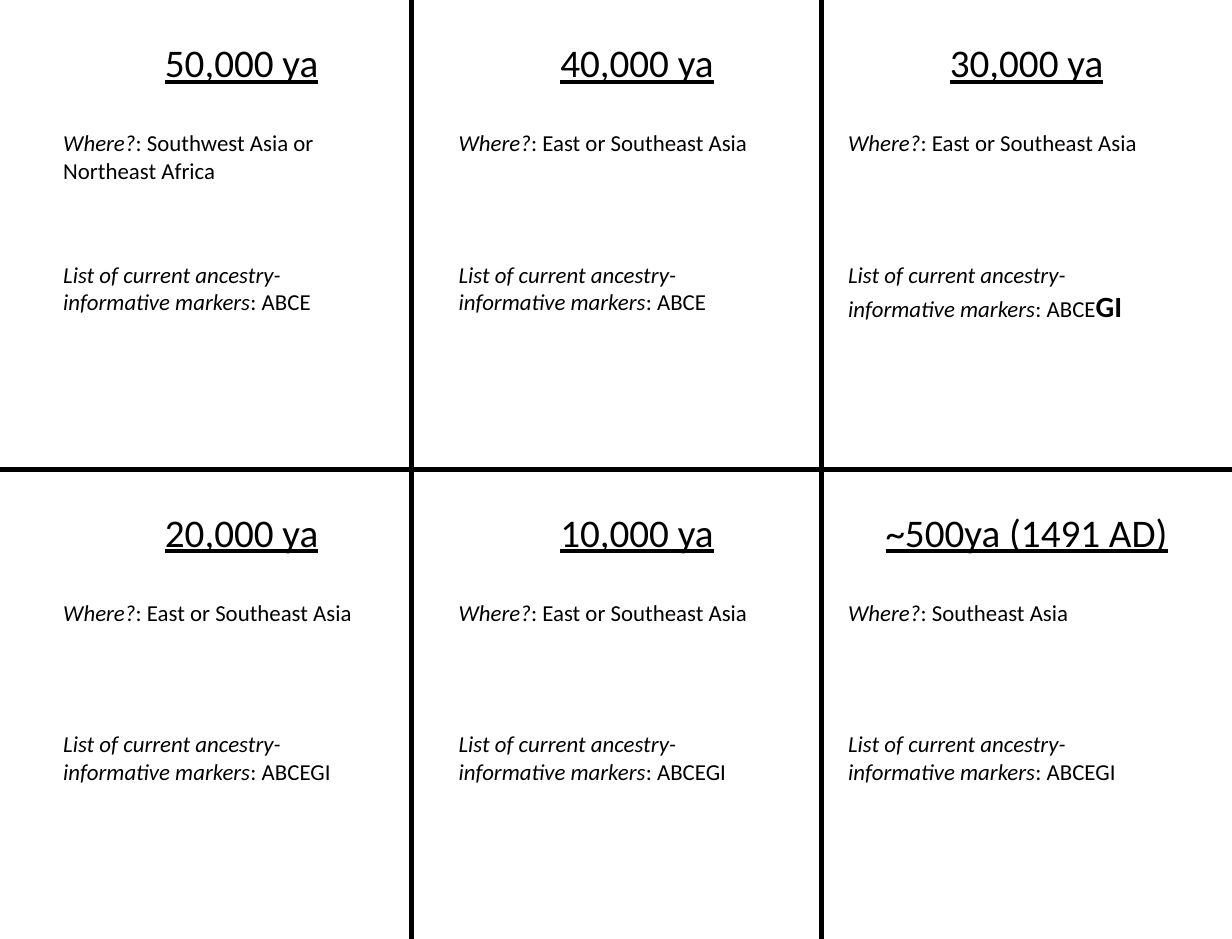
import pptx
import pptx.dml.color
import pptx.enum.shapes
import pptx.enum.text
import pptx.util
import lxml.etree

Inches = pptx.util.Inches
SLIDE_WIDTH, SLIDE_HEIGHT = 10.5, 8
ROW_HEIGHT = SLIDE_HEIGHT / 2
COLUMN_LEFTS = [0.44, 3.81, 7.13]
BLACK = "000000"
DRAWING_NS = "http://schemas.openxmlformats.org/drawingml/2006/main"

# Date, place, inherited markers, newly gained markers
PERIODS = [
    ("50,000 ya", "Southwest Asia or Northeast Africa", "ABCE", ""),
    ("40,000 ya", "East or Southeast Asia", "ABCE", ""),
    ("30,000 ya", "East or Southeast Asia", "ABCE", "GI"),
    ("20,000 ya", "East or Southeast Asia", "ABCEGI", ""),
    ("10,000 ya", "East or Southeast Asia", "ABCEGI", ""),
    ("~500ya (1491 AD)", "Southeast Asia", "ABCEGI", ""),
]


def color(hex_code):
    return pptx.dml.color.RGBColor.from_string(hex_code)


def add_run(paragraph, text, size=14, bold=False, italic=False, underline=False):
    run = paragraph.add_run()
    run.text = text
    run.font.name = "Calibri"
    run.font.size = pptx.util.Pt(size)
    run.font.bold = bold
    run.font.italic = italic
    run.font.underline = underline
    run.font.color.rgb = color(BLACK)


def add_paragraph_box(slide, left, top, width, height, centered=False):
    frame = slide.shapes.add_textbox(
        Inches(left), Inches(top), Inches(width), Inches(height)).text_frame
    frame.word_wrap = True
    frame.auto_size = pptx.enum.text.MSO_AUTO_SIZE.SHAPE_TO_FIT_TEXT
    paragraph = frame.paragraphs[0]
    if centered:
        paragraph.alignment = pptx.enum.text.PP_ALIGN.CENTER
    return paragraph


def add_divider(slide, x1, y1, x2, y2):
    divider = slide.shapes.add_connector(
        pptx.enum.shapes.MSO_CONNECTOR.STRAIGHT,
        Inches(x1), Inches(y1), Inches(x2), Inches(y2))
    divider.line.color.rgb = color(BLACK)
    divider.line.width = pptx.util.Pt(3)
    properties = divider.line._get_or_add_ln().getparent()
    lxml.etree.SubElement(properties, f"{{{DRAWING_NS}}}effectLst")


def add_period(slide, left, top, date, place, markers, new_markers):
    # Date heading
    heading = add_paragraph_box(slide, left, top + 0.28, 3.24, 0.5, centered=True)
    add_run(heading, date, size=24, underline=True)

    # Place
    where_height = 0.57 if len(place) > 30 else 0.34
    where = add_paragraph_box(slide, left, top + 1.05, 2.85, where_height)
    add_run(where, "Where?", italic=True)
    add_run(where, f": {place}")

    # Ancestry markers, with new ones emphasised
    marker_height = 0.64 if new_markers else 0.57
    marker_list = add_paragraph_box(slide, left, top + 2.17, 2.85, marker_height)
    add_run(marker_list, "List of current ancestry-informative markers", italic=True)
    add_run(marker_list, f": {markers}")
    if new_markers:
        add_run(marker_list, new_markers, size=18, bold=True)


def main():
    deck = pptx.Presentation()
    deck.slide_width = Inches(SLIDE_WIDTH)
    deck.slide_height = Inches(SLIDE_HEIGHT)
    slide = deck.slides.add_slide(deck.slide_layouts[6])

    # Grid dividers
    add_divider(slide, 0, ROW_HEIGHT, SLIDE_WIDTH, ROW_HEIGHT)
    for x in (3.51, 7):
        add_divider(slide, x, 0, x, SLIDE_HEIGHT)

    # Six periods, three to a row
    for index, period in enumerate(PERIODS):
        row, column = divmod(index, len(COLUMN_LEFTS))
        add_period(slide, COLUMN_LEFTS[column], row * ROW_HEIGHT, *period)

    deck.save("out.pptx")


if __name__ == "__main__":
    main()
